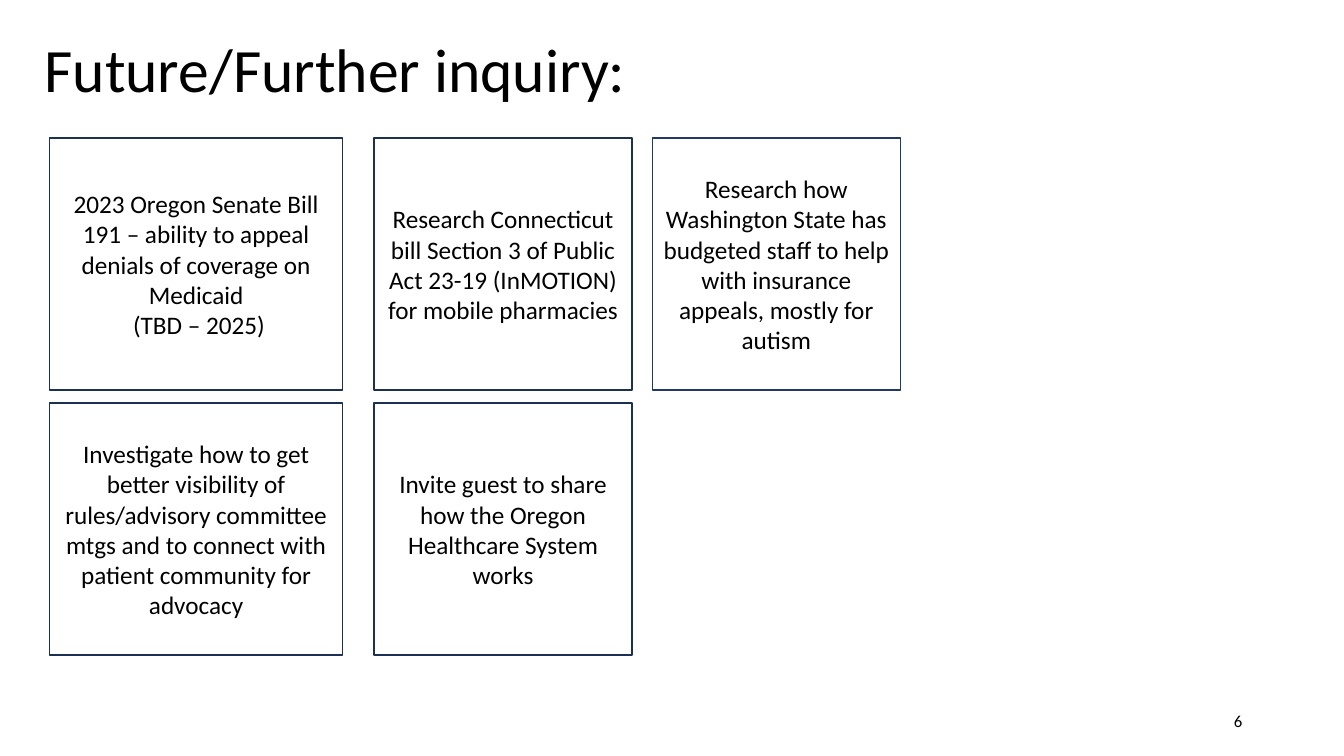
import pptx
import pptx.util
import pptx.dml.color
import pptx.enum.shapes
import pptx.enum.text

Inches = pptx.util.Inches
ALIGN = pptx.enum.text.PP_ALIGN

COLUMNS = [(0.49, 2.91), (3.71, 2.56), (6.47, 2.46)]
ROW_TOP, ROW_STEP, CARD_HEIGHT = 1.37, 2.63, 2.5
CARD_ROWS = [
    [
        ("2023 Oregon Senate Bill 191 – ability to appeal denials of coverage on Medicaid\n (TBD – 2025)", "1C3052"),
        ("Research Connecticut bill Section 3 of Public Act 23-19 (InMOTION) for mobile pharmacies", "1C3052"),
        ("Research how Washington State has budgeted staff to help with insurance appeals, mostly for autism", "1F3864"),
    ],
    [
        ("Investigate how to get better visibility of rules/advisory committee mtgs and to connect with patient community for advocacy", "1C3052"),
        ("Invite guest to share how the Oregon Healthcare System works", "1C3052"),
    ],
]


def rgb(color):
    return pptx.dml.color.RGBColor.from_string(color)


def place(shape, box):
    shape.left, shape.top, shape.width, shape.height = map(Inches, box)


def set_text(shape, text, size, align):
    tf = shape.text_frame
    tf.text = text
    tf.word_wrap = True
    tf.auto_size = pptx.enum.text.MSO_AUTO_SIZE.NONE
    tf.vertical_anchor = pptx.enum.text.MSO_ANCHOR.MIDDLE
    for p in tf.paragraphs:
        p.alignment = align
        for r in p.runs:
            r.font.size = pptx.util.Pt(size)
            r.font.name = "Calibri"
            r.font.color.rgb = rgb("000000")


def add_title(s, box):
    title = s.shapes.title
    place(title, box)
    set_text(title, "Future/Further inquiry:", 44, ALIGN.LEFT)
    title.text_frame.paragraphs[0].line_spacing = 0.9


def add_page_number(s, box):
    number = s.shapes.add_textbox(*map(Inches, box))
    set_text(number, "6", 12, ALIGN.RIGHT)


def add_card(s, box, text, line_color):
    card = s.shapes.add_shape(pptx.enum.shapes.MSO_SHAPE.RECTANGLE, *map(Inches, box))
    card.shadow.inherit = False
    card.fill.background()
    card.line.color.rgb = rgb(line_color)
    card.line.width = pptx.util.Pt(1)
    set_text(card, text, 18, ALIGN.CENTER)


def add_cards(s, top):
    for row, cards in enumerate(CARD_ROWS):
        for (left, width), (text, line_color) in zip(COLUMNS, cards):
            add_card(s, (left, top + row * ROW_STEP, width, CARD_HEIGHT), text, line_color)


def main():
    prs = pptx.Presentation()
    prs.slide_width, prs.slide_height = Inches(13.33), Inches(7.5)
    s = prs.slides.add_slide(prs.slide_layouts[5])
    add_title(s, (0.34, 0, 11.16, 1.43))
    add_page_number(s, (9.42, 6.95, 3, 0.4))
    add_cards(s, ROW_TOP)
    prs.save("out.pptx")


if __name__ == "__main__":
    main()
